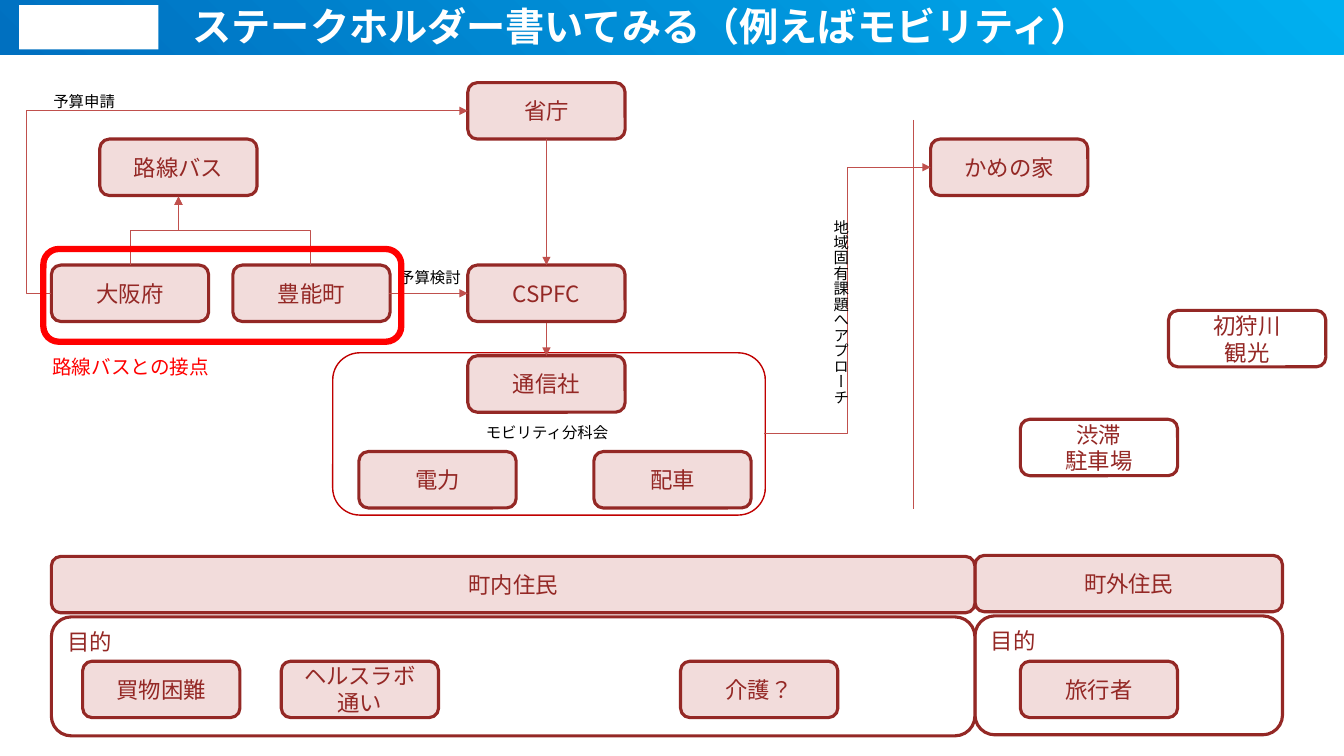
from lxml import etree
from pptx import Presentation
from pptx.dml.color import RGBColor
from pptx.enum.lang import MSO_LANGUAGE_ID
from pptx.enum.shapes import MSO_CONNECTOR, MSO_SHAPE
from pptx.enum.text import MSO_ANCHOR, MSO_AUTO_SIZE, PP_ALIGN
from pptx.oxml.ns import qn
from pptx.util import Inches, Pt

RECT, ROUND = MSO_SHAPE.RECTANGLE, MSO_SHAPE.ROUNDED_RECTANGLE
STRAIGHT, ELBOW = MSO_CONNECTOR.STRAIGHT, MSO_CONNECTOR.ELBOW
LEFT, CENTER = PP_ALIGN.LEFT, PP_ALIGN.CENTER
TOP, MIDDLE = MSO_ANCHOR.TOP, MSO_ANCHOR.MIDDLE
FIT, FIXED = MSO_AUTO_SIZE.SHAPE_TO_FIT_TEXT, MSO_AUTO_SIZE.NONE
JAPANESE = MSO_LANGUAGE_ID.JAPANESE

FONT = "Noto Sans CJK JP"
COLORS = {
    "sky": "00B0F0", "blue": "0070C0", "white": "FFFFFF", "black": "000000",
    "pink": "F2DCDB", "wine": "942825", "brick": "C0504D",
    "group": "C00000", "red": "FF0000",
}
BOX_W, BOX_H = 1.56, 0.56


def color(name):
    return RGBColor.from_string(COLORS[name])


def write(frame, text, size=16, ink="wine", bold=False, align=LEFT,
          anchor=TOP, wrap=True, fit=FIXED, spacing=None):
    """Fill a text frame, one paragraph for each line of text."""
    frame.word_wrap = wrap
    frame.auto_size = fit
    frame.vertical_anchor = anchor
    frame.text = text
    for para in frame.paragraphs:
        para.alignment = align
        if spacing:
            para.line_spacing = spacing
        for run in para.runs:
            run.font.size = Pt(size)
            run.font.bold = bold
            run.font.language_id = JAPANESE
            run.font.color.rgb = color(ink)
            run.font.name = FONT
            props = run.font._element
            etree.SubElement(props, qn("a:ea")).set("typeface", FONT)


class Board:
    def __init__(self, slide):
        self.slide = slide
        self.shapes = slide.shapes

    def shape(self, x, y, w, h, kind=ROUND, fill=None, line=None, width=2.25):
        item = self.shapes.add_shape(
            kind, Inches(x), Inches(y), Inches(w), Inches(h))
        item.shadow.inherit = False
        if fill:
            item.fill.solid()
            item.fill.fore_color.rgb = color(fill)
        else:
            item.fill.background()
        if line:
            item.line.color.rgb = color(line)
            item.line.width = Pt(width)
        else:
            item.line.fill.background()
        return item

    def box(self, text, x, y, w=BOX_W, h=BOX_H, fill="pink",
            align=CENTER, anchor=MIDDLE):
        item = self.shape(x, y, w, h, fill=fill, line="wine")
        write(item.text_frame, text, align=align, anchor=anchor)

    def label(self, text, x, y, w, h, size=11, ink="black", upright=False):
        item = self.shapes.add_textbox(
            Inches(x), Inches(y), Inches(w), Inches(h))
        write(item.text_frame, text, size=size, ink=ink, wrap=False, fit=FIT)
        if upright:
            item.text_frame._txBody.bodyPr.set("vert", "eaVert")

    def link(self, x1, y1, x2, y2, kind=STRAIGHT, arrow=True, bend=None):
        item = self.shapes.add_connector(
            kind, Inches(x1), Inches(y1), Inches(x2), Inches(y2))
        item.line.color.rgb = color("brick")
        item.line.width = Pt(0.5)
        props = item._element.spPr
        if arrow:
            tail = etree.SubElement(props.find(qn("a:ln")), qn("a:tailEnd"))
            tail.set("type", "triangle")
        if bend is not None:
            guide = etree.SubElement(props.find(".//" + qn("a:avLst")),
                                     qn("a:gd"))
            guide.set("name", "adj1")
            guide.set("fmla", f"val {round(bend * 100000)}")
        etree.SubElement(props, qn("a:effectLst"))
        return item

    def rise(self, x1, y1, x2, y2):
        """Elbow arrow that leaves upwards: a level one turned by 270 degrees."""
        mid_x, mid_y = (x1 + x2) / 2, (y1 + y2) / 2
        run, shift = (y1 - y2) / 2, (x2 - x1) / 2
        item = self.link(mid_x - run, mid_y - shift,
                         mid_x + run, mid_y + shift, ELBOW)
        item._element.spPr.find(qn("a:xfrm")).set("rot", str(270 * 60000))

    def title(self, text, x, y, w, h, indent):
        item = self.shapes.title
        item.left, item.top = Inches(x), Inches(y)
        item.width, item.height = Inches(w), Inches(h)
        frame = item.text_frame
        frame.margin_left = Inches(indent)
        frame.margin_top = frame.margin_right = frame.margin_bottom = 0
        write(frame, text, size=28, ink="white", bold=True,
              anchor=MIDDLE, spacing=0.9)
        # Bring the title in front of the header band
        self.shapes._spTree.append(item._element)


def main():
    deck = Presentation()
    deck.slide_width, deck.slide_height = Inches(13.33), Inches(7.5)
    board = Board(deck.slides.add_slide(deck.slide_layouts[5]))

    # Header band
    band = board.shape(0, 0, 13.33, 0.54, kind=RECT)
    band.fill.gradient()
    band.fill.gradient_angle = 225
    for stop, name in zip(band.fill.gradient_stops, ("sky", "blue")):
        stop.color.rgb = color(name)
    board.shape(0.19, 0.05, 1.38, 0.44, kind=RECT, fill="white")
    board.title("ステークホルダー書いてみる（例えばモビリティ）",
                1.52, 0.05, 10.84, 0.47, indent=0.39)

    # Working group outline
    board.shape(3.3, 3.5, 4.29, 1.61, line="group", width=1)

    # Residents and their purposes
    for text, x, y, w in (("町外住民", 9.67, 5.51, 3.05),
                          ("町内住民", 0.51, 5.52, 9.16)):
        board.box("目的", x, y + 0.6, w, 1.18, fill="white",
                  align=LEFT, anchor=TOP)
        board.box(text, x, y, w)
    for text, x in (("買物困難", 0.82), ("ヘルスラボ通い", 2.79),
                    ("介護？", 6.75), ("旅行者", 10.12)):
        board.box(text, x, 6.56)

    # Stakeholders
    for text, x, y in (("省庁", 4.64, 0.82), ("路線バス", 0.99, 1.38),
                       ("かめの家", 9.23, 1.38), ("大阪府", 0.51, 2.63),
                       ("豊能町", 2.31, 2.63), ("CSPFC", 4.64, 2.63),
                       ("通信社", 4.64, 3.53), ("電力", 3.56, 4.48),
                       ("配車", 5.89, 4.48)):
        board.box(text, x, y)

    # Local issues
    for text, x, y in (("初狩川\n観光", 11.59, 3.08),
                       ("渋滞\n駐車場", 10.12, 4.16)):
        board.box(text, x, y, fill=None)

    # Divider and arrows
    board.link(9.06, 1.19, 9.06, 5.05, arrow=False)
    board.link(5.42, 1.38, 5.42, 2.63)
    board.link(5.42, 3.2, 5.42, 3.53)
    board.link(3.86, 2.91, 4.64, 2.91)
    board.link(0.51, 2.91, 4.64, 1.1, ELBOW, bend=-0.06)
    board.link(7.58, 4.3, 9.23, 1.66, ELBOW)
    for x in (1.29, 3.08):
        board.rise(x, 2.63, 1.77, 1.95)

    # Labels
    board.label("予算申請", 0.43, 0.86, 0.82, 0.29)
    board.label("予算検討", 3.86, 2.61, 0.82, 0.29)
    board.label("モビリティ分科会", 4.72, 4.15, 1.44, 0.29)
    board.label("地域固有課題へアプローチ", 8.09, 2.08, 0.39, 1.95, upright=True)

    # Highlighted contact point
    board.shape(0.43, 2.47, 3.55, 0.92, line="red", width=4.5)
    board.label("路線バスとの接点", 0.42, 3.47, 1.77, 0.34, size=14, ink="red")

    deck.save("out.pptx")


if __name__ == "__main__":
    main()
